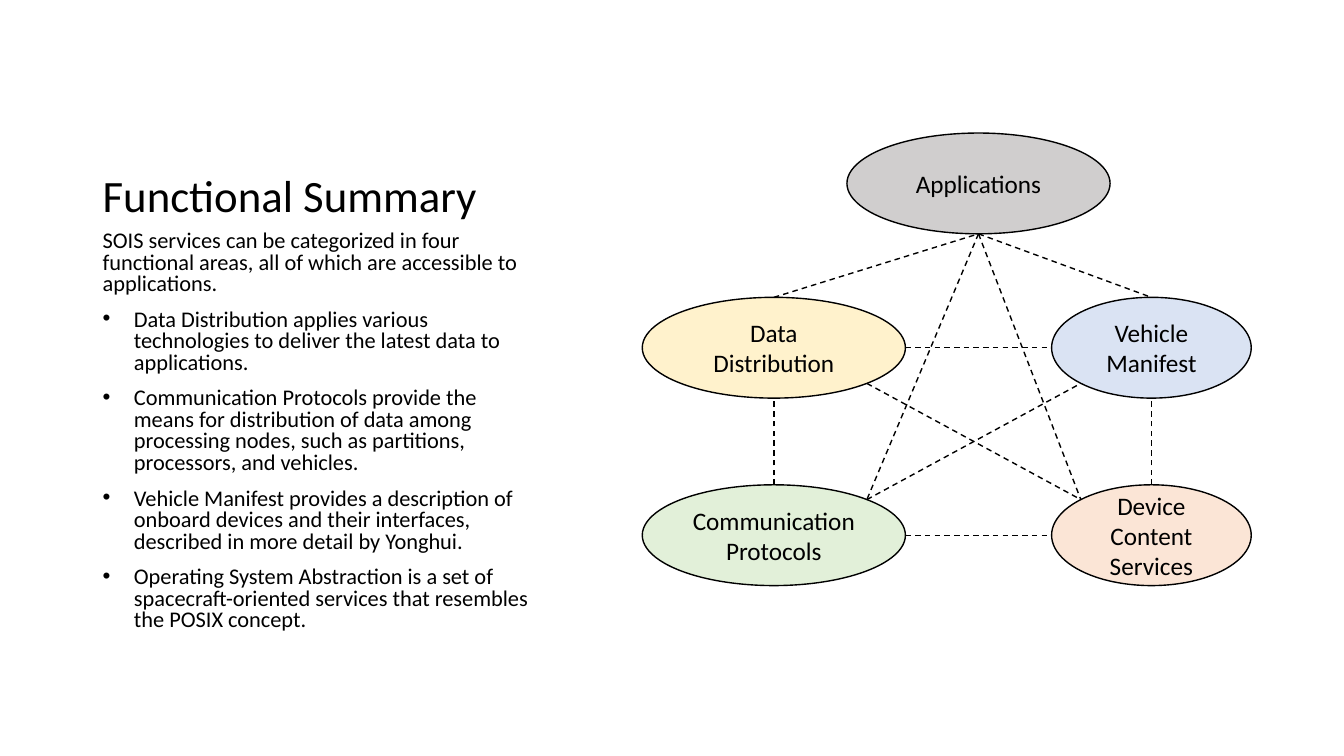
import math
from lxml import etree
from pptx import Presentation
from pptx.dml.color import RGBColor
from pptx.enum import dml, shapes, text
from pptx.oxml import ns
from pptx.util import Inches, Pt


def color(value):
    return RGBColor.from_string(value)


def style_text(paragraph, size):
    for run in paragraph.runs:
        run.font.name = "Calibri"
        run.font.size = Pt(size)
        run.font.color.rgb = color("000000")


presentation = Presentation()
presentation.slide_width = Inches(13.33)
presentation.slide_height = Inches(7.5)
slide = presentation.slides.add_slide(presentation.slide_layouts[6])

title = slide.shapes.add_textbox(Inches(0.92), Inches(0.5), Inches(4.3), Inches(1.75))
title.text_frame.word_wrap = True
title.text_frame.vertical_anchor = text.MSO_ANCHOR.BOTTOM
title.text_frame.text = "Functional Summary"
title.text_frame.paragraphs[0].line_spacing = 0.9
style_text(title.text_frame.paragraphs[0], 32)

summary = [
    "SOIS services can be categorized in four functional areas, all of which are accessible to applications.",
    "Data Distribution applies various technologies to deliver the latest data to applications.",
    "Communication Protocols provide the means for distribution of data among processing nodes, "
    "such as partitions, processors, and vehicles.",
    "Vehicle Manifest provides a description of onboard devices and their interfaces, "
    "described in more detail by Yonghui.",
    "Operating System Abstraction is a set of spacecraft-oriented services that resembles the POSIX concept.",
]
body = slide.shapes.add_textbox(Inches(0.92), Inches(2.25), Inches(4.51), Inches(4.17))
body.text_frame.word_wrap = True
body.text_frame.text = "\n".join(summary)
for index, paragraph in enumerate(body.text_frame.paragraphs):
    paragraph.line_spacing = 0.8
    paragraph.space_before = Pt(10)
    style_text(paragraph, 16)
    if index > 0:
        properties = paragraph._p.get_or_add_pPr()
        properties.set("marL", str(Inches(0.31)))
        properties.set("indent", str(-Inches(0.31)))
        font = etree.SubElement(properties, ns.qn("a:buFont"))
        font.set("typeface", "Arial")
        bullet = etree.SubElement(properties, ns.qn("a:buChar"))
        bullet.set("char", "•")

wide, narrow, height = 2.61, 1.98, 1
left_column, right_column = 6.37, 10.43
upper_row, lower_row = 2.95, 4.81
areas = {
    "Data Distribution": (left_column, upper_row, wide, "FFF2CC"),
    "Communication Protocols": (left_column, lower_row, wide, "E2F0D9"),
    "Vehicle Manifest": (right_column, upper_row, narrow, "DAE3F3"),
    "Device Content Services": (right_column, lower_row, narrow, "FBE5D6"),
    "Applications": (8.4, 1.32, wide, "D0CECE"),
}
for name, (left, top, width, fill) in areas.items():
    ellipse = slide.shapes.add_shape(
        shapes.MSO_SHAPE.OVAL, Inches(left), Inches(top), Inches(width), Inches(height))
    ellipse.shadow.inherit = False
    ellipse.fill.solid()
    ellipse.fill.fore_color.rgb = color(fill)
    ellipse.line.color.rgb = color("000000")
    ellipse.line.width = Pt(1)
    ellipse.text_frame.vertical_anchor = text.MSO_ANCHOR.MIDDLE
    ellipse.text_frame.text = name
    paragraph = ellipse.text_frame.paragraphs[0]
    paragraph.alignment = text.PP_ALIGN.CENTER
    style_text(paragraph, 18)

right, lower_right, bottom, lower_left, left_side, upper_left, top_side, upper_right = range(0, 360, 45)
links = [
    ("Data Distribution", right, "Vehicle Manifest", left_side),
    ("Communication Protocols", top_side, "Data Distribution", bottom),
    ("Data Distribution", lower_right, "Device Content Services", upper_left),
    ("Communication Protocols", upper_right, "Vehicle Manifest", lower_left),
    ("Device Content Services", top_side, "Vehicle Manifest", bottom),
    ("Communication Protocols", right, "Device Content Services", left_side),
    ("Data Distribution", top_side, "Applications", bottom),
    ("Applications", bottom, "Vehicle Manifest", top_side),
    ("Applications", bottom, "Communication Protocols", upper_right),
    ("Applications", bottom, "Device Content Services", upper_left),
]
for start, start_angle, end, end_angle in links:
    points = []
    for name, angle in ((start, start_angle), (end, end_angle)):
        left, top, width, fill = areas[name]
        points.append(Inches(left + width / 2 * (1 + math.cos(math.radians(angle)))))
        points.append(Inches(top + height / 2 * (1 + math.sin(math.radians(angle)))))
    link = slide.shapes.add_connector(shapes.MSO_CONNECTOR.STRAIGHT, *points)
    link.line.color.rgb = color("000000")
    link.line.width = Pt(1)
    link.line.dash_style = dml.MSO_LINE.DASH
    etree.SubElement(link._element.spPr, ns.qn("a:effectLst"))

presentation.save("out.pptx")
